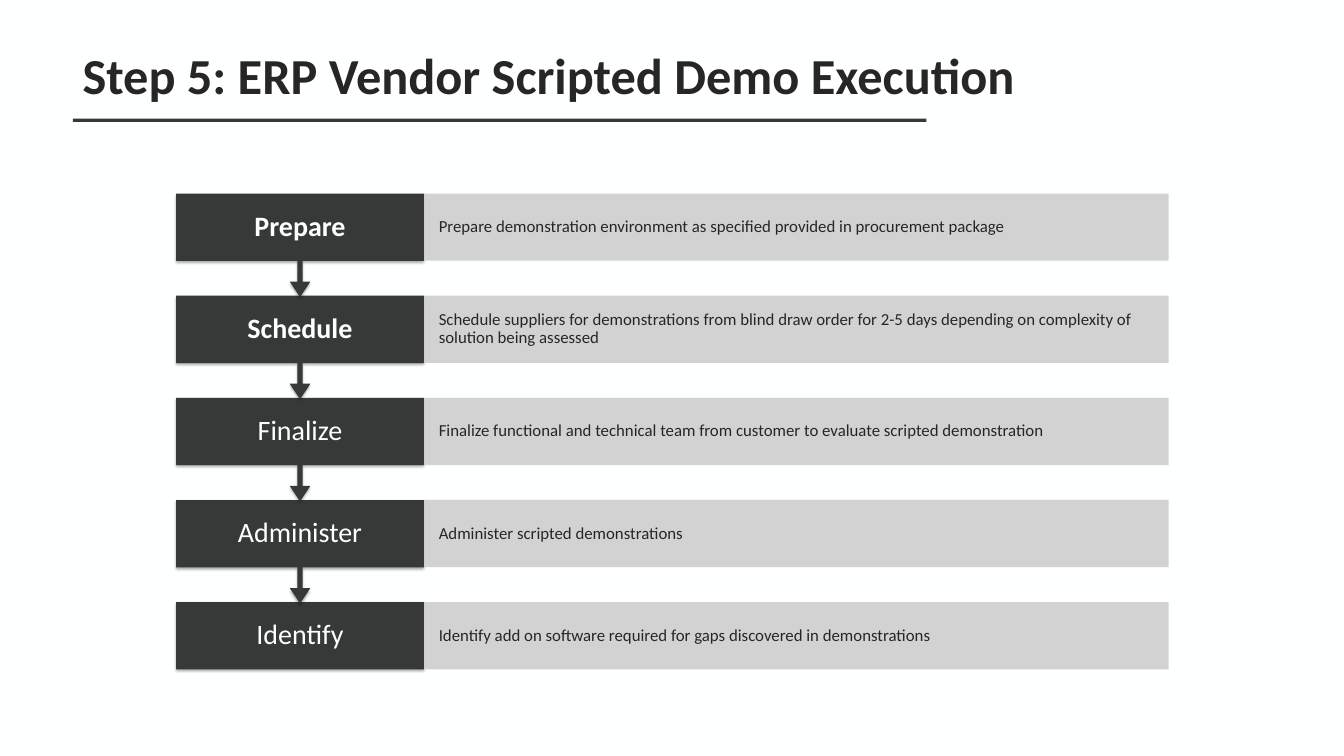
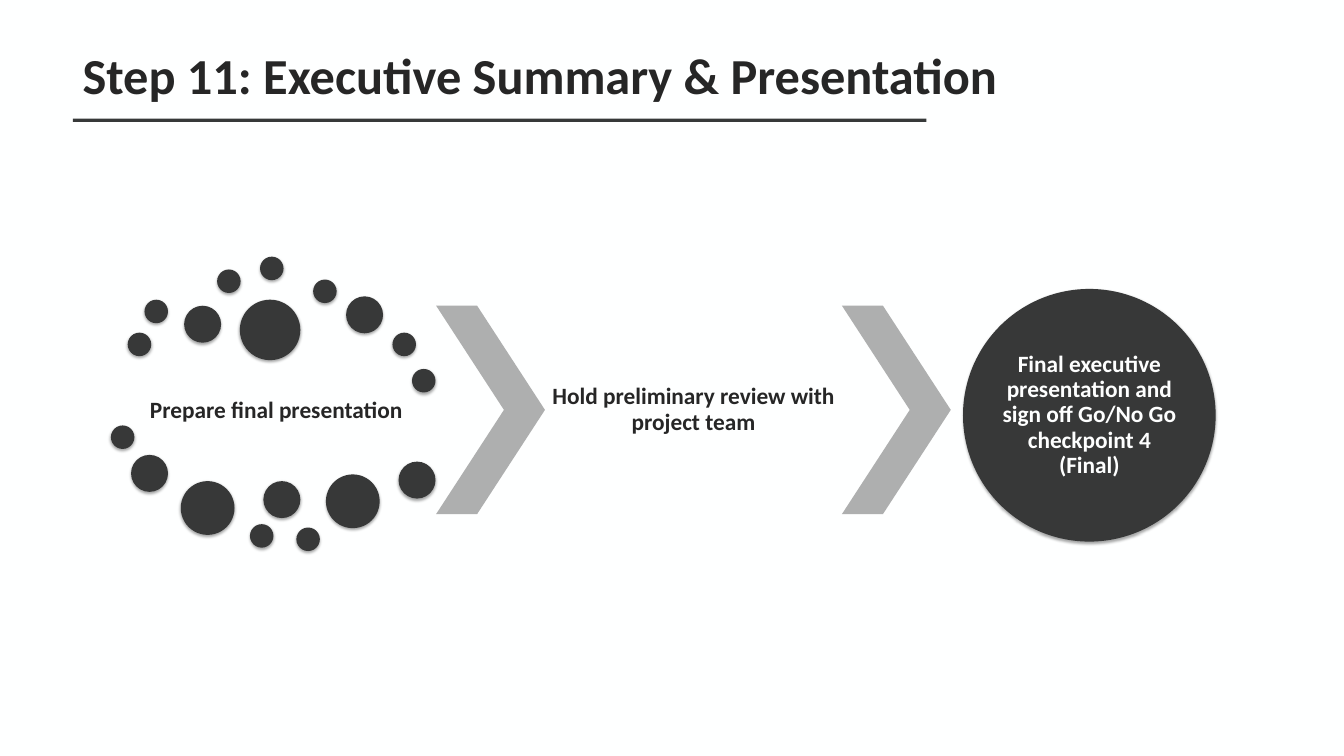
"""Build two process slides: demo execution steps and the executive summary."""
from dataclasses import dataclass
from typing import NamedTuple

from lxml import etree
from pptx import Presentation
from pptx.dml.color import RGBColor
from pptx.enum.shapes import MSO_SHAPE
from pptx.enum.text import MSO_ANCHOR, PP_ALIGN
from pptx.oxml.ns import qn
from pptx.shapes.autoshape import Shape
from pptx.slide import Slide
from pptx.util import Pt

RECT, OVAL = MSO_SHAPE.RECTANGLE, MSO_SHAPE.OVAL
CALLOUT, CHEVRON = MSO_SHAPE.UP_ARROW_CALLOUT, MSO_SHAPE.CHEVRON
TOP, MIDDLE = MSO_ANCHOR.TOP, MSO_ANCHOR.MIDDLE
LEFT, CENTER = PP_ALIGN.LEFT, PP_ALIGN.CENTER

PAPER, INK, DARK = "FEFFFF", "262626", "373838"
RULE, BAR, ARROW = "373939", "CECECE", "AEAFAF"
FONT = "Calibri"
SMALL, MID, LARGE, HUGE = 25.2, 39.6, 57.6, 64.8


class Box(NamedTuple):
    """A frame in points."""
    left: float
    top: float
    width: float
    height: float


@dataclass(frozen=True)
class Style:
    """The look of a text block."""
    size: float
    color: str = INK
    bold: bool = False
    align: PP_ALIGN = CENTER
    anchor: MSO_ANCHOR = MIDDLE
    side: float = 2.2
    edge: float = 2.2
    lead: float = 0.9


@dataclass(frozen=True)
class Step:
    """One named step and its detail."""
    name: str
    detail: str
    bold: bool = False


class Dot(NamedTuple):
    """A round dot in points."""
    left: float
    top: float
    size: float


HEAD = Style(54, bold=True, align=LEFT, anchor=TOP, side=7.2, edge=3.6, lead=1)
DETAIL = Style(18, align=LEFT, side=15.8, edge=18)
PHASE = Style(25, bold=True)
FINAL = Style(25, PAPER, True, side=0, edge=0)

STEPS = [
    Step("Prepare", "Prepare demonstration environment as specified provided in "
         "procurement package", True),
    Step("Schedule", "Schedule suppliers for demonstrations from blind draw order "
         "for 2-5 days depending on complexity of solution being assessed", True),
    Step("Finalize", "Finalize functional and technical team from customer to "
         "evaluate scripted demonstration"),
    Step("Administer", "Administer scripted demonstrations"),
    Step("Identify", "Identify add on software required for gaps discovered in "
         "demonstrations"),
]

DOTS = [
    Dot(136.8, 356.4, SMALL), Dot(154.8, 321.1, SMALL), Dot(197.3, 327.6, MID),
    Dot(232.6, 288.7, SMALL), Dot(278.6, 275, SMALL), Dot(335.5, 299.5, SMALL),
    Dot(370.8, 317.5, MID), Dot(420.5, 356.4, SMALL), Dot(441.4, 395.3, SMALL),
    Dot(257, 321.1, HUGE), Dot(118.8, 455.8, SMALL), Dot(140.4, 487.4, MID),
    Dot(193.7, 515.5, LARGE), Dot(267.8, 561.6, SMALL), Dot(282.2, 515.5, MID),
    Dot(317.5, 565.2, SMALL), Dot(349.2, 508.3, LARGE), Dot(427, 494.6, MID),
]


def paint(fill, color: str) -> None:
    """Make a fill solid in a hex colour."""
    fill.solid()
    fill.fore_color.rgb = RGBColor.from_string(color)


def fade(color: etree.ElementBase, part: int) -> None:
    """Set the opacity of a colour element in percent."""
    etree.SubElement(color, qn("a:alpha"), val=str(part * 1000))


def shade(shape: Shape) -> None:
    """Give a shape a soft shadow below it."""
    effects = shape.element.spPr.find(qn("a:effectLst"))
    outer = etree.SubElement(
        effects, qn("a:outerShdw"), blurRad=str(Pt(3.1)), dist=str(Pt(1.8)),
        dir="5400000", rotWithShape="0")
    fade(etree.SubElement(outer, qn("a:srgbClr"), val="000000"), 35)


def draw(slide: Slide, kind: MSO_SHAPE, box: Box, color: str,
         shadow: bool = False, adjust: tuple[float, ...] = ()) -> Shape:
    """Add a filled shape without a line."""
    shape = slide.shapes.add_shape(kind, *map(Pt, box))
    paint(shape.fill, color)
    shape.line.fill.background()
    shape.shadow.inherit = False
    if shadow:
        shade(shape)
    for index, value in enumerate(adjust):
        shape.adjustments[index] = value
    return shape


def apply(target: object, values: dict) -> None:
    """Set each named value on the target."""
    for name, value in values.items():
        setattr(target, name, value)


def write(shape: Shape, text: str, style: Style) -> None:
    """Put styled text in a shape."""
    frame = shape.text_frame
    side, edge = Pt(style.side), Pt(style.edge)
    apply(frame, {"word_wrap": True, "vertical_anchor": style.anchor,
                  "margin_left": side, "margin_right": side,
                  "margin_top": edge, "margin_bottom": edge})
    line = frame.paragraphs[0]
    apply(line, {"alignment": style.align, "line_spacing": style.lead})
    run = line.add_run()
    run.text = text
    apply(run.font, {"name": FONT, "size": Pt(style.size), "bold": style.bold})
    paint(run.font.fill, style.color)


def label(slide: Slide, box: Box, text: str, style: Style) -> None:
    """Add a text box."""
    write(slide.shapes.add_textbox(*map(Pt, box)), text, style)


def start(deck: Presentation, title: str) -> Slide:
    """Add a slide with the shared title and rule."""
    slide = deck.slides.add_slide(deck.slide_layouts[6])
    paint(slide.background.fill, PAPER)
    draw(slide, RECT, Box(78.1, 127.1, 914.4, 3.6), RULE)
    label(slide, Box(81.4, 43.9, 1244.9, 71.3), title, HEAD)
    return slide


def add_steps(slide: Slide) -> None:
    """Draw the chain of steps from the last to the first."""
    left, top, width, height = 188.6, 207.4, 265.7, 72
    pitch, reach, span = 109.44, 110.9, 797.8
    last = len(STEPS) - 1
    for index, step in reversed(list(enumerate(STEPS))):
        box = Box(left, top + index * pitch, width, height)
        if index == last:
            draw(slide, RECT, box, DARK, True)
        else:
            link = draw(slide, CALLOUT, box._replace(height=reach), DARK, True,
                        (0.05, 0.1, 0.15, 0.65))
            link.rotation = 180
        label(slide, box, step.name,
              Style(30, PAPER, step.bold, side=18.7, edge=16.6))
        bar = draw(slide, RECT, box._replace(left=left + width, width=span), BAR)
        fade(bar.element.spPr.find(".//" + qn("a:srgbClr")), 90)
        write(bar, step.detail, DETAIL)


def add_phases(slide: Slide) -> None:
    """Draw the dots, chevrons and final circle."""
    width = 318.2
    label(slide, Box(136.8, 388.1, width, 105.1), "Prepare final presentation", PHASE)
    for dot in DOTS:
        draw(slide, OVAL, Box(*dot, dot.size), DARK, True)
    first = Box(467.3, 327.6, 116.6, 223.2)
    review = first._replace(left=first.left + first.width, width=width)
    for left in (first.left, review.left + width):
        draw(slide, CHEVRON, first._replace(left=left), ARROW, adjust=(0.623,))
    label(slide, review, "Hold preliminary review with project team", PHASE)
    circle = draw(slide, OVAL, Box(1031.8, 309.6, 270.7, 270.7), DARK, True)
    write(circle, "Final executive presentation and sign off Go/No Go "
          "checkpoint 4 (Final)", FINAL)


def main() -> None:
    """Build and save the deck."""
    deck = Presentation()
    apply(deck, {"slide_width": Pt(1440), "slide_height": Pt(810)})
    add_steps(start(deck, "Step 5: ERP Vendor Scripted Demo Execution"))
    add_phases(start(deck, "Step 11: Executive Summary & Presentation"))
    deck.save("out.pptx")


if __name__ == "__main__":
    main()
